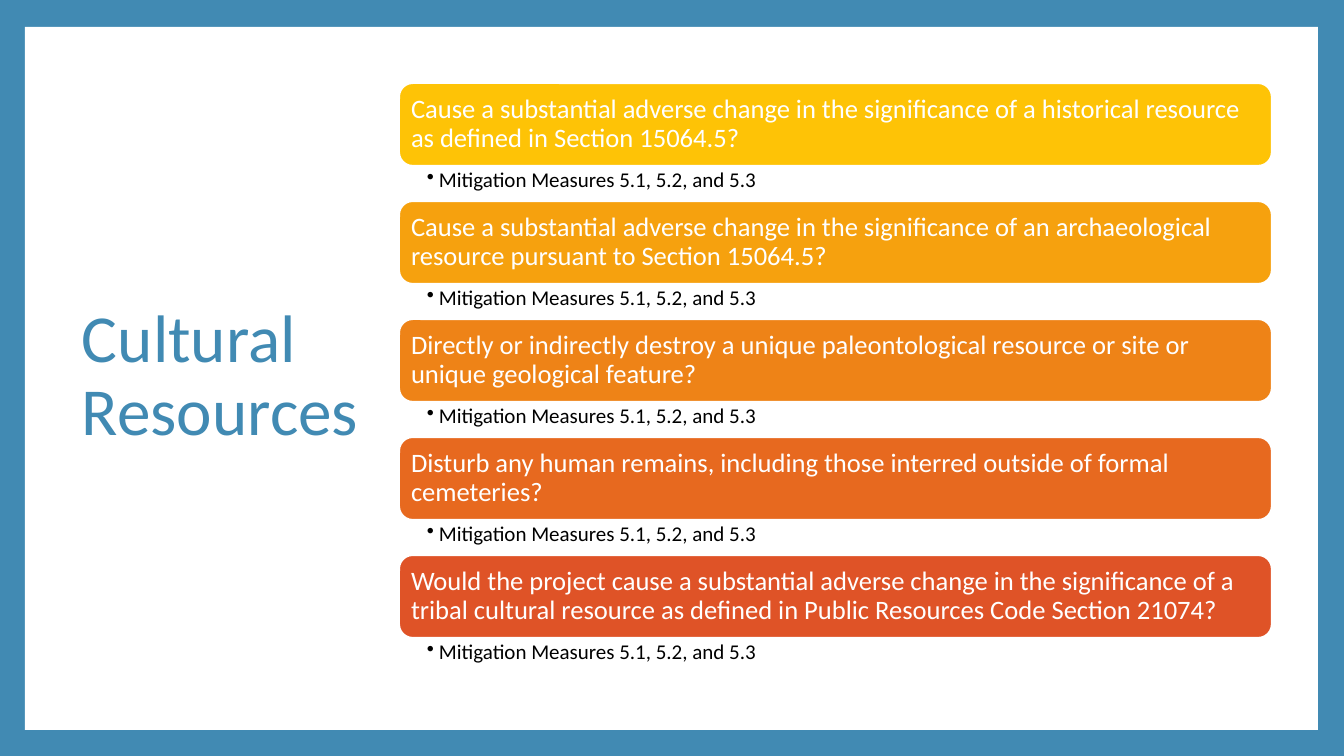
"""Build the Cultural Resources slide with five impact questions and their mitigation measures."""
import pptx
import pptx.dml.color
import pptx.enum.shapes
import pptx.enum.text
import pptx.oxml.ns
import pptx.util
from lxml import etree

COLORS = {
    "blue": "418AB3",
    "white": "FFFFFF",
    "black": "000000",
    "yellow": "FEC306",
    "amber": "F6A10E",
    "orange": "EE8317",
    "rust": "E7691F",
    "red": "DF5327",
}
QUESTIONS = [
    ("yellow", "Cause a substantial adverse change in the significance of a historical resource as defined in Section 15064.5?"),
    ("amber", "Cause a substantial adverse change in the significance of an archaeological resource pursuant to Section 15064.5?"),
    ("orange", "Directly or indirectly destroy a unique paleontological resource or site or unique geological feature?"),
    ("rust", "Disturb any human remains, including those interred outside of formal cemeteries?"),
    ("red", "Would the project cause a substantial adverse change in the significance of a tribal cultural resource as defined in Public Resources Code Section 21074?"),
]
MEASURES = "Mitigation Measures 5.1, 5.2, and 5.3"
EMU_PER_PX = 914400 / 100.8
LIST_LEFT, LIST_TOP, LIST_WIDTH = 399, 83, 873
QUESTION_HEIGHT, MEASURE_HEIGHT = 83, 35
BULLET_INDENT = 12


def px(length):
    return pptx.util.Emu(round(length * EMU_PER_PX))


def write(shape, text, size, color, insets, anchor):
    frame = shape.text_frame
    frame.word_wrap = True
    frame.vertical_anchor = anchor
    frame.margin_left, frame.margin_top, frame.margin_right, frame.margin_bottom = map(px, insets)
    paragraph = frame.paragraphs[0]
    paragraph.alignment = pptx.enum.text.PP_ALIGN.LEFT
    paragraph.line_spacing = 0.9
    run = paragraph.add_run()
    run.text = text
    run.font.name = "Calibri"
    run.font.size = pptx.util.Pt(size)
    run.font.color.rgb = pptx.dml.color.RGBColor.from_string(COLORS[color])
    return paragraph


presentation = pptx.Presentation()
presentation.slide_width = px(1344)
presentation.slide_height = px(756)
slide = presentation.slides.add_slide(presentation.slide_layouts[6])
slide.background.fill.solid()
slide.background.fill.fore_color.rgb = pptx.dml.color.RGBColor.from_string(COLORS["blue"])

middle = pptx.enum.text.MSO_ANCHOR.MIDDLE
top = pptx.enum.text.MSO_ANCHOR.TOP

page = slide.shapes.add_shape(
    pptx.enum.shapes.MSO_SHAPE.RECTANGLE, px(25), px(27), px(1293), px(703))
page.shadow.inherit = False
page.fill.solid()
page.fill.fore_color.rgb = pptx.dml.color.RGBColor.from_string(COLORS["white"])
page.line.fill.background()

title = slide.shapes.add_textbox(px(72), px(68), px(371), px(618))
write(title, "Cultural Resources", 48, "blue", (10, 5, 10, 5), middle)

for row, (color, wording) in enumerate(QUESTIONS):
    question_top = LIST_TOP + row * (QUESTION_HEIGHT + MEASURE_HEIGHT)
    question = slide.shapes.add_shape(
        pptx.enum.shapes.MSO_SHAPE.ROUNDED_RECTANGLE,
        px(LIST_LEFT), px(question_top), px(LIST_WIDTH), px(QUESTION_HEIGHT))
    question.shadow.inherit = False
    question.fill.solid()
    question.fill.fore_color.rgb = pptx.dml.color.RGBColor.from_string(COLORS[color])
    question.line.color.rgb = pptx.dml.color.RGBColor.from_string(COLORS["white"])
    question.line.width = pptx.util.Pt(1.5)
    write(question, wording, 19, "white", (8, 8, 8, 8), middle)

    measure = slide.shapes.add_textbox(
        px(LIST_LEFT), px(question_top + QUESTION_HEIGHT), px(LIST_WIDTH), px(MEASURE_HEIGHT))
    bullet_line = write(measure, MEASURES, 15, "black", (28, 3, 15, 3), top)
    properties = bullet_line._p.get_or_add_pPr()
    properties.set("marL", str(px(BULLET_INDENT)))
    properties.set("indent", str(px(-BULLET_INDENT)))
    etree.SubElement(properties, pptx.oxml.ns.qn("a:buChar"), char="•")

presentation.save("out.pptx")
